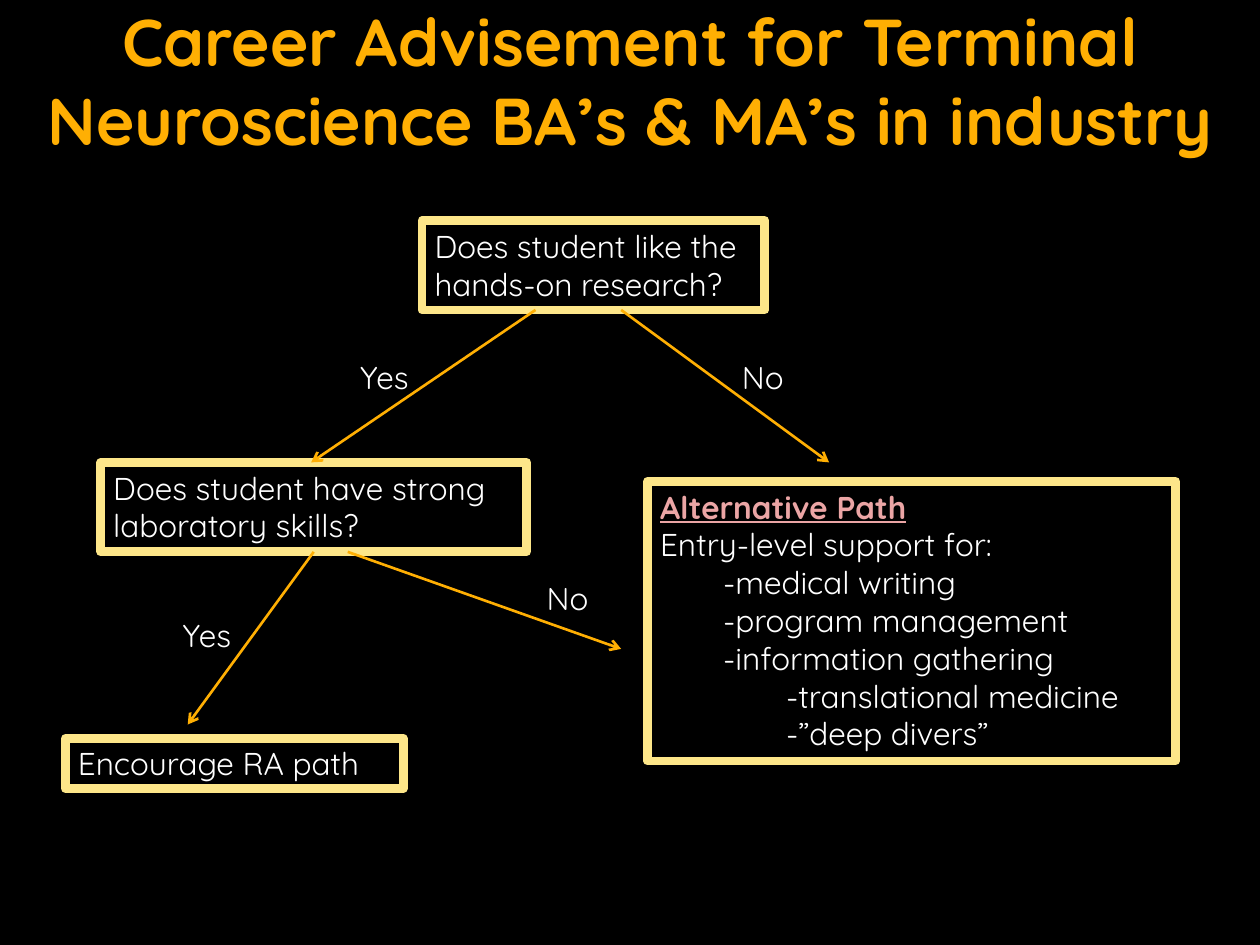
from dataclasses import dataclass

from lxml import etree
from pptx import Presentation
from pptx.dml.color import RGBColor
from pptx.enum.shapes import MSO_CONNECTOR, MSO_SHAPE
from pptx.enum.text import MSO_ANCHOR, MSO_AUTO_SIZE, PP_ALIGN
from pptx.oxml.ns import qn
from pptx.util import Inches, Pt

STRAIGHT = MSO_CONNECTOR.STRAIGHT
RECTANGLE = MSO_SHAPE.RECTANGLE
TOP = MSO_ANCHOR.TOP
FIT_SHAPE = MSO_AUTO_SIZE.SHAPE_TO_FIT_TEXT
CENTER, LEFT = PP_ALIGN.CENTER, PP_ALIGN.LEFT

# Positions are columns and rows of a grid laid over the whole slide
SLIDE_WIDTH, SLIDE_HEIGHT = Inches(10), Inches(7.5)
COLUMNS, ROWS = 100, 75


@dataclass(frozen=True)
class Theme:
    font: str = "Quicksand"
    title_size: float = 37.8
    body_size: float = 18
    border_width: float = 5
    arrow_width: float = 1.5
    background: RGBColor = RGBColor.from_string("000000")
    accent: RGBColor = RGBColor.from_string("FFAF03")
    border: RGBColor = RGBColor.from_string("FDE689")
    text: RGBColor = RGBColor.from_string("FFFFFF")
    heading: RGBColor = RGBColor.from_string("EBA5A5")


THEME = Theme()

# Each line is (indent level, wording)
ALTERNATIVES = [
    (0, "Alternative Path"),
    (0, "Entry-level support for:"),
    (1, "-medical writing"),
    (1, "-program management"),
    (1, "-information gathering"),
    (2, "-translational medicine"),
    (2, "-”deep divers”"),
]

# Left, top, width, height, lines
DECISION_BOXES = [
    (33.5, 17.5, 27.2, 7.1, [(0, "Does student like the hands-on research?")]),
    (8, 36.7, 33.8, 7.1, [(0, "Does student have strong laboratory skills?")]),
    (5.2, 58.6, 26.8, 4, [(0, "Encourage RA path")]),
]
ALTERNATIVE_BOX = (51.4, 38.2, 41.9, 22.2, ALTERNATIVES)

# Start and end points
ARROWS = [
    ((42.5, 24.6), (24.7, 36.7)),
    ((49.3, 24.6), (65.8, 36.7)),
    ((27.6, 43.8), (49.3, 51.5)),
    ((24.9, 43.8), (14.9, 57.5)),
]

# Left, top, width, wording
ANSWERS = [
    (27.6, 27.9, 5.9, "Yes"),
    (57.9, 27.9, 5.5, "No"),
    (13.5, 48.4, 5.9, "Yes"),
    (42.4, 45.5, 5.5, "No"),
]


def grid(column, row):
    return round(SLIDE_WIDTH * column / COLUMNS), round(SLIDE_HEIGHT * row / ROWS)


def style(para, size, color, bold=False, align=LEFT):
    para.alignment = align
    font = para.font
    font.name, font.size, font.bold = THEME.font, Pt(size), bold
    font.color.rgb = color


def write_lines(frame, lines):
    """Fill a text frame with body text, one paragraph a line."""
    for index, (level, wording) in enumerate(lines):
        para = frame.add_paragraph() if index else frame.paragraphs[0]
        para.text, para.level = wording, level
        style(para, THEME.body_size, THEME.text)


def add_title(page, wording):
    box = page.shapes.add_textbox(*grid(0, -0.5), *grid(100, 8.6))
    frame = box.text_frame
    frame.word_wrap = True
    frame.text = wording
    style(frame.paragraphs[0], THEME.title_size, THEME.accent, True, CENTER)


def add_box(page, left, top, width, height, lines):
    """Add an outlined box and return its paragraphs."""
    box = page.shapes.add_shape(RECTANGLE, *grid(left, top), *grid(width, height))
    box.shadow.inherit = False
    box.fill.background()
    box.line.color.rgb = THEME.border
    box.line.width = Pt(THEME.border_width)
    frame = box.text_frame
    frame.word_wrap = True
    frame.vertical_anchor = TOP
    frame.auto_size = FIT_SHAPE
    write_lines(frame, lines)
    return frame.paragraphs


def add_answer(page, left, top, width, wording):
    label = page.shapes.add_textbox(*grid(left, top), *grid(width, 4))
    frame = label.text_frame
    frame.word_wrap = False
    frame.auto_size = FIT_SHAPE
    write_lines(frame, [(0, wording)])


def add_arrow(page, start, end):
    arrow = page.shapes.add_connector(STRAIGHT, *grid(*start), *grid(*end))
    arrow.line.color.rgb = THEME.accent
    arrow.line.width = Pt(THEME.arrow_width)
    etree.SubElement(arrow.line._get_or_add_ln(), qn("a:tailEnd"), type="arrow")
    etree.SubElement(arrow._element.spPr, qn("a:effectLst"))


def main():
    deck = Presentation()
    deck.slide_width, deck.slide_height = SLIDE_WIDTH, SLIDE_HEIGHT
    page = deck.slides.add_slide(deck.slide_layouts[6])
    page.background.fill.solid()
    page.background.fill.fore_color.rgb = THEME.background

    add_title(page, "Career Advisement for Terminal Neuroscience BA’s & MA’s in industry")

    # Decision tree
    for box in DECISION_BOXES:
        add_box(page, *box)
    for start, end in ARROWS:
        add_arrow(page, start, end)
    for answer in ANSWERS:
        add_answer(page, *answer)

    # Alternative path, with its heading set apart
    heading = add_box(page, *ALTERNATIVE_BOX)[0]
    style(heading, THEME.body_size, THEME.heading, bold=True)
    heading.font.underline = True

    deck.save("out.pptx")


if __name__ == "__main__":
    main()
